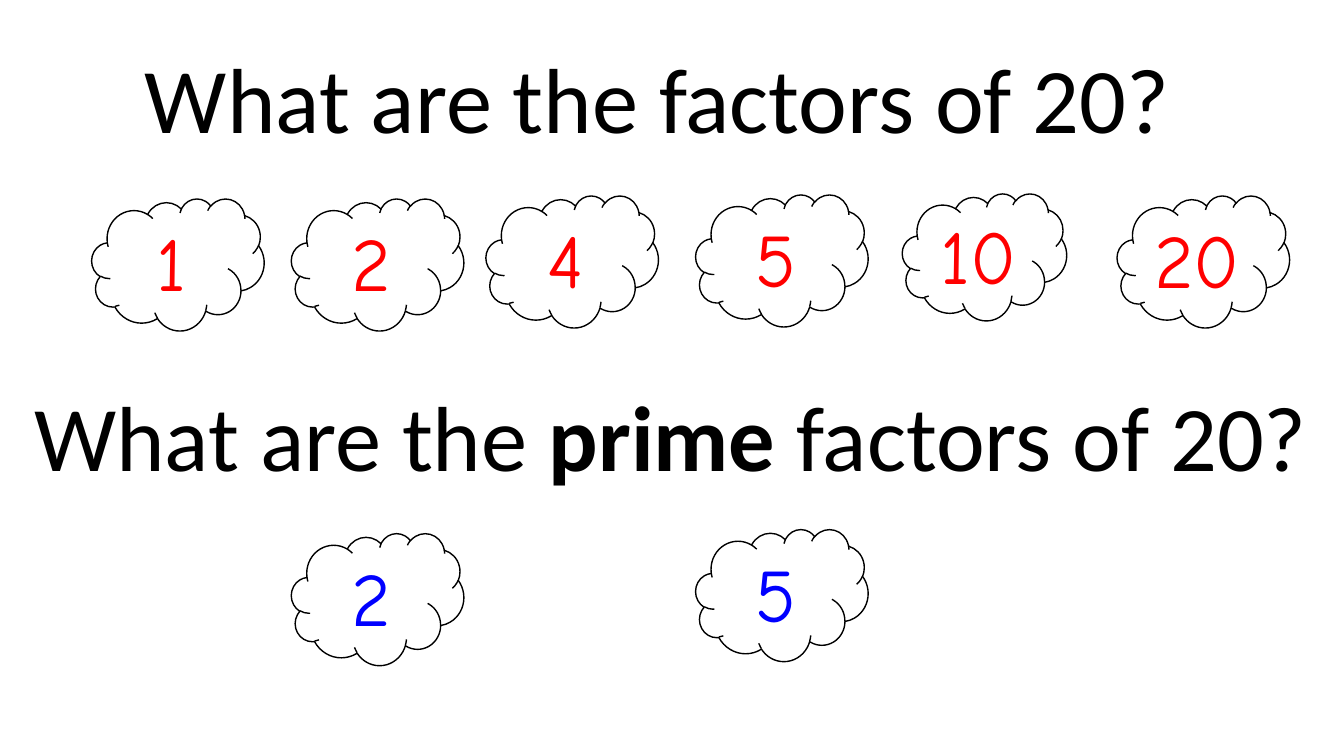
from dataclasses import dataclass, replace

from pptx import Presentation
from pptx.dml.color import RGBColor
from pptx.enum.shapes import MSO_SHAPE
from pptx.enum.text import MSO_ANCHOR, MSO_AUTO_SIZE, PP_ALIGN
from pptx.slide import Slide
from pptx.text.text import TextFrame
from pptx.util import Emu, Pt

PX = 9144  # 100 px to the inch


@dataclass(frozen=True)
class Theme:
    ink: RGBColor = RGBColor(0x00, 0x00, 0x00)
    paper: RGBColor = RGBColor(0xFF, 0xFF, 0xFF)
    factor: RGBColor = RGBColor(0xFF, 0x00, 0x00)
    prime: RGBColor = RGBColor(0x00, 0x00, 0xFF)
    question_font: str = "Calibri"
    number_font: str = "Comic Neue"
    question_size: Pt = Pt(66)
    number_size: Pt = Pt(54)
    outline: Pt = Pt(1)


THEME = Theme()


@dataclass(frozen=True)
class Run:
    text: str
    bold: bool = False


@dataclass(frozen=True)
class Question:
    left: int
    top: int
    width: int
    runs: tuple[Run, ...]
    height: int = 121


@dataclass(frozen=True)
class Cloud:
    number: int
    left: int
    top: int
    width: int = 171
    height: int = 131
    color: RGBColor = THEME.factor


QUESTIONS = (
    Question(68, 36, 1189, (Run("What are the factors of 20? "),)),
    Question(18, 371, 1315, (Run("What are the "), Run("prime", bold=True),
                             Run(" factors of 20? "))),
)
FACTORS = (
    Cloud(1, 91, 197),
    Cloud(2, 289, 197),
    Cloud(4, 482, 194),
    Cloud(5, 690, 193),
    Cloud(10, 895, 192, 163, 126),
    Cloud(20, 1108, 194),
)
PRIMES = (2, 5)
PRIME_ROW_DROP = 332


def px(*lengths: int) -> list[Emu]:
    return [Emu(length * PX) for length in lengths]


def add_runs(tf: TextFrame, runs: tuple[Run, ...], font: str, size: Pt,
             color: RGBColor) -> None:
    tf.word_wrap = True
    p = tf.paragraphs[0]
    p.alignment = PP_ALIGN.CENTER
    for run in runs:
        r = p.add_run()
        r.text = run.text
        r.font.name = font
        r.font.size = size
        r.font.bold = run.bold
        r.font.color.rgb = color


def add_question(s: Slide, question: Question) -> None:
    sp = s.shapes.add_textbox(*px(question.left, question.top,
                                  question.width, question.height))
    add_runs(sp.text_frame, question.runs, THEME.question_font,
             THEME.question_size, THEME.ink)
    sp.text_frame.auto_size = MSO_AUTO_SIZE.SHAPE_TO_FIT_TEXT


def add_cloud(s: Slide, cloud: Cloud) -> None:
    sp = s.shapes.add_shape(MSO_SHAPE.CLOUD, *px(cloud.left, cloud.top,
                                                 cloud.width, cloud.height))
    sp.shadow.inherit = False
    sp.fill.solid()
    sp.fill.fore_color.rgb = THEME.paper
    sp.line.color.rgb = THEME.ink
    sp.line.width = THEME.outline
    sp.text_frame.vertical_anchor = MSO_ANCHOR.MIDDLE
    add_runs(sp.text_frame, (Run(str(cloud.number)),), THEME.number_font,
             THEME.number_size, cloud.color)


def main() -> None:
    prs = Presentation()
    prs.slide_width, prs.slide_height = px(1333, 750)
    s = prs.slides.add_slide(prs.slide_layouts[6])
    for question in QUESTIONS:
        add_question(s, question)
    for cloud in FACTORS:
        add_cloud(s, cloud)
        if cloud.number in PRIMES:
            add_cloud(s, replace(cloud, top=cloud.top + PRIME_ROW_DROP,
                                 color=THEME.prime))
    prs.save("out.pptx")


if __name__ == "__main__":
    main()
